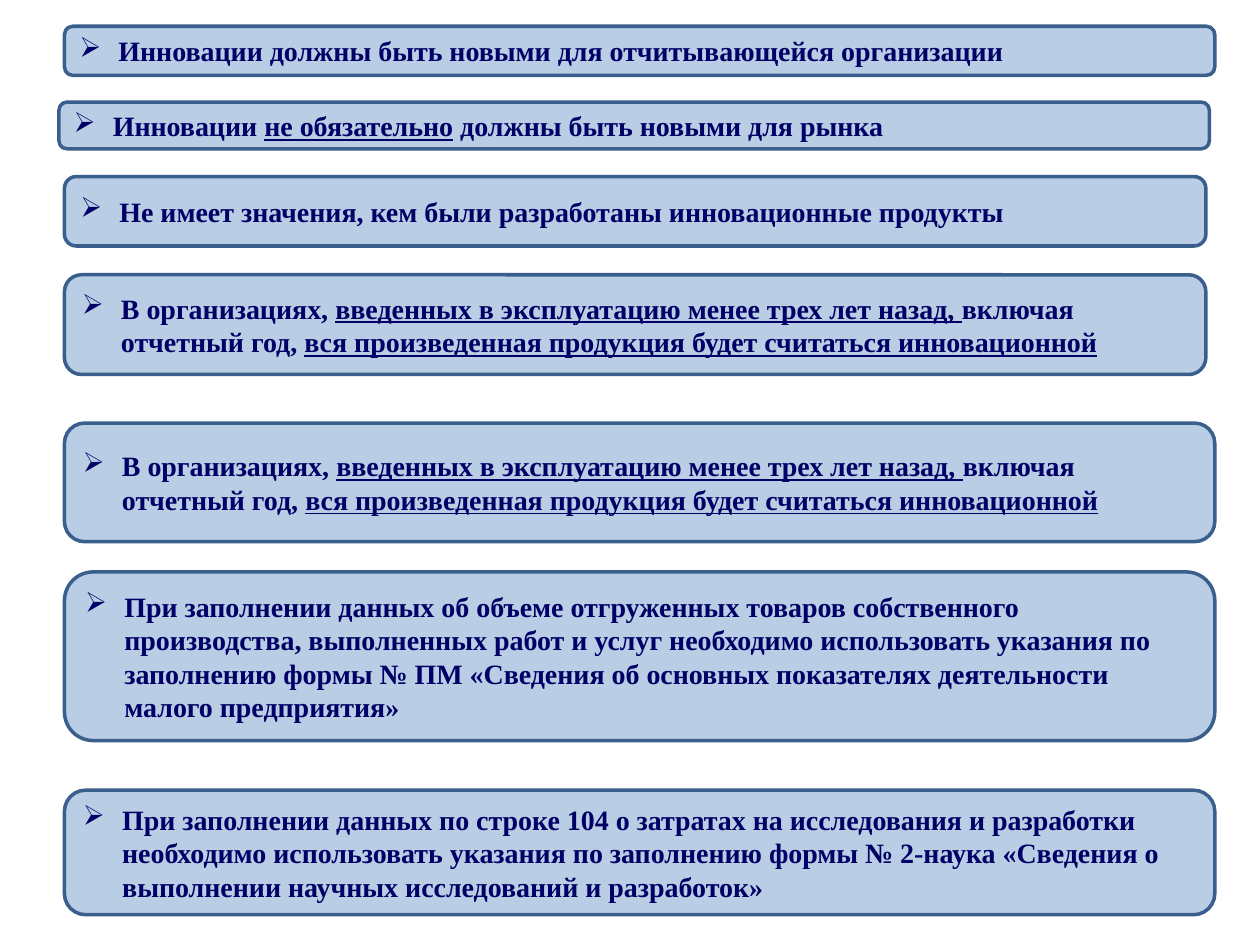
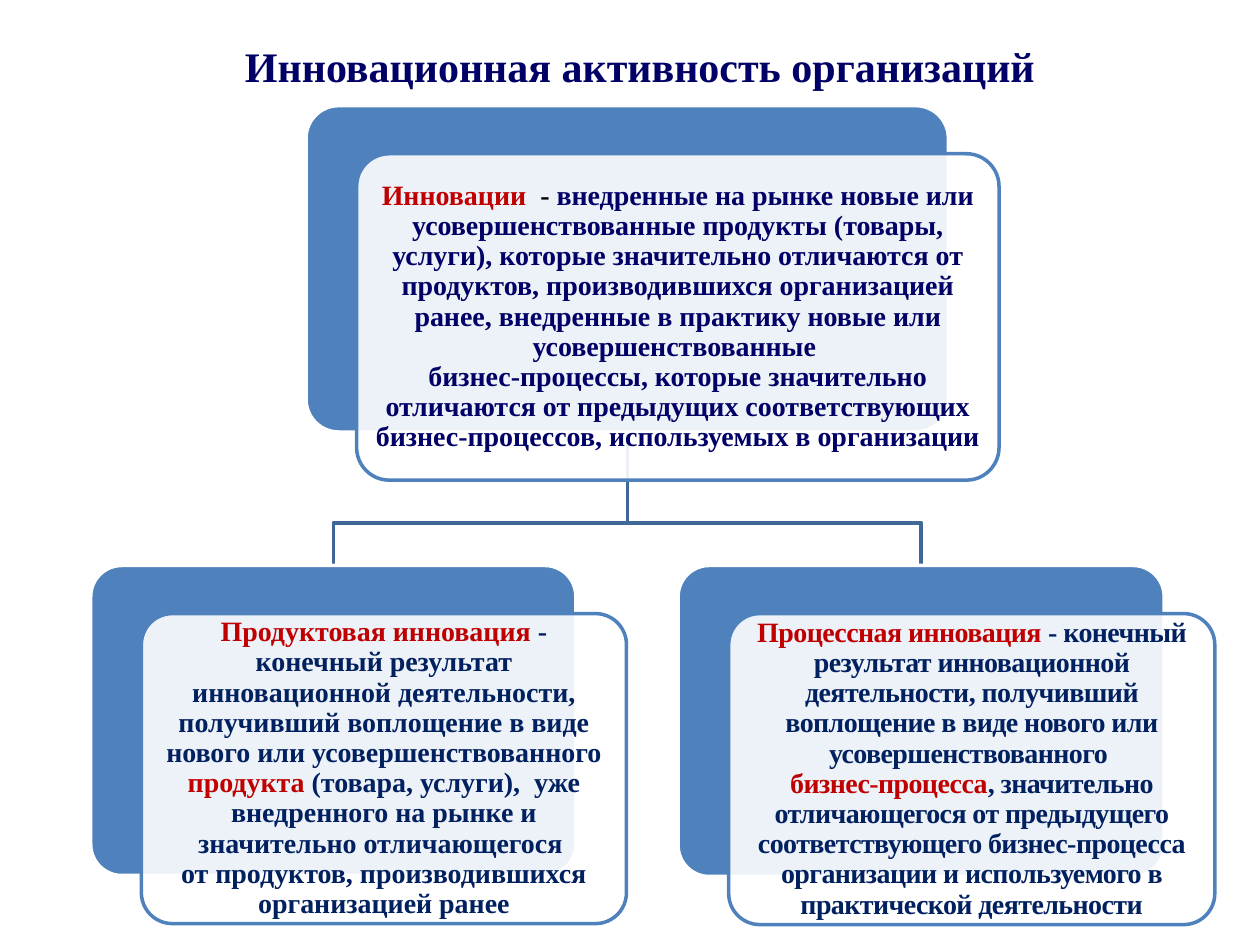
from pptx import Presentation
from pptx import util as u
from pptx.dml.color import RGBColor
from pptx.enum import shapes, text
from pptx.oxml.ns import qn
from lxml import etree

Cm = u.Cm
COLORS = {
    "navy": "000066",
    "deep": "002060",
    "red": "C00000",
    "black": "000000",
    "white": "FFFFFF",
    "pale": "B9CDE5",
    "border": "3A5F8C",
    "blue": "4F81BD",
    "link": "3F6797",
}
BODY_FONT = {"name": "Times New Roman", "size": u.Pt(16), "bold": True}
TITLE_FONT = {**BODY_FONT, "size": u.Pt(24)}
FRAME = {"word_wrap": True, "vertical_anchor": text.MSO_ANCHOR.MIDDLE}
INSETS = ("margin_left", "margin_top", "margin_right", "margin_bottom")


def add_rounded(slide, box, fill, line, radius):
    shape = slide.shapes.add_shape(
        shapes.MSO_SHAPE.ROUNDED_RECTANGLE, *[Cm(length) for length in box])
    shape.adjustments[0] = radius
    shape.shadow.inherit = False
    shape.fill.solid()
    shape.fill.fore_color.rgb = RGBColor.from_string(COLORS[fill])
    shape.line.color.rgb = RGBColor.from_string(COLORS[line])
    shape.line.width = u.Pt(2)
    return shape


def write_runs(frame, pieces, font=BODY_FONT, spacing=None):
    for name, value in FRAME.items():
        setattr(frame, name, value)
    paragraph = frame.paragraphs[0]
    for content, color, underline in pieces:
        for index, line in enumerate(content.split("\n")):
            if index:
                paragraph.add_line_break()
            if not line:
                continue
            run = paragraph.add_run()
            run.text = line
            for name, value in {**font, "underline": underline}.items():
                setattr(run.font, name, value)
            run.font.color.rgb = RGBColor.from_string(COLORS[color])
            if spacing:
                run.font._element.set("spc", str(spacing))
    return paragraph


presentation = Presentation()
presentation.slide_width = Cm(25.4)
presentation.slide_height = Cm(19.05)

rules_slide = presentation.slides.add_slide(presentation.slide_layouts[6])

WIDE, NARROW = 23.19, 23.01
new_organization = [
    ("В организациях, ", False),
    ("введенных в эксплуатацию менее трех лет назад, ", True),
    ("включая отчетный год, ", False),
    ("вся произведенная продукция будет считаться инновационной", True),
]
rules = [
    ((1.3, 0.53, WIDE, 0.99),
     [("Инновации должны быть новыми для отчитывающейся организации", False)]),
    ((1.19, 2.06, WIDE, 0.94),
     [("Инновации ", False), ("не обязательно", True),
      (" должны быть новыми для рынка", False)]),
    ((1.3, 3.56, NARROW, 1.4),
     [("Не имеет значения, кем были разработаны инновационные продукты", False)]),
    ((1.3, 5.54, NARROW, 2.01), new_organization),
    ((1.3, 8.53, WIDE, 2.39), new_organization),
    ((1.3, 11.53, WIDE, 3.4),
     [("При заполнении данных об объеме отгруженных товаров собственного "
       "производства, выполненных работ и услуг необходимо использовать указания "
       "по заполнению формы № ПМ «Сведения об основных показателях деятельности "
       "малого предприятия»", False)]),
    ((1.3, 15.93, WIDE, 2.51),
     [("При заполнении данных по строке 104 о затратах на исследования и "
       "разработки необходимо использовать указания по заполнению формы № 2-наука "
       "«Сведения о выполнении научных исследований и разработок»", False)]),
]
for box, pieces in rules:
    shape = add_rounded(rules_slide, box, "pale", "border", 0.17)
    paragraph = write_runs(
        shape.text_frame,
        [(content, "navy", underline) for content, underline in pieces])
    paragraph.alignment = text.PP_ALIGN.LEFT
    properties = paragraph._p.get_or_add_pPr()
    properties.set("marL", str(Cm(0.79)))
    properties.set("indent", str(-Cm(0.79)))
    bullet_color = etree.SubElement(properties, qn("a:buClr"))
    etree.SubElement(bullet_color, qn("a:srgbClr"), val=COLORS["navy"])
    etree.SubElement(properties, qn("a:buChar"), char="➢")

activity_slide = presentation.slides.add_slide(presentation.slide_layouts[5])

title = activity_slide.shapes.title
title_box = {"left": 1.09, "top": 0.74, "width": 23.62, "height": 1.17}
for name, value in title_box.items():
    setattr(title, name, Cm(value))
paragraph = write_runs(
    title.text_frame,
    [("Инновационная активность организаций", "navy", False)], TITLE_FONT)
paragraph.alignment = text.PP_ALIGN.CENTER

cards = [
    ((6.17, 2.13, 12.95, 6.58), None, [
        ("Инновации  ", "red"),
        ("- ", "black"),
        ("внедренные на рынке новые или усовершенствованные продукты (товары, "
         "услуги), которые значительно отличаются от продуктов, производившихся "
         "организацией ранее, внедренные в практику новые или усовершенствованные "
         "\nбизнес-процессы, которые значительно отличаются от предыдущих "
         "соответствующих бизнес-процессов, используемых в организации", "navy"),
    ]),
    ((1.83, 11.4, 9.78, 6.25), None, [
        ("Продуктовая инновация ", "red"),
        ("- конечный результат инновационной деятельности, получивший воплощение "
         "в виде нового или усовершенствованного ", "deep"),
        ("продукта", "red"),
        (" (товара, услуги),  уже внедренного на рынке и значительно "
         "отличающегося \nот продуктов, производившихся организацией ранее", "deep"),
    ]),
    ((13.67, 11.4, 9.8, 6.27), -30, [
        ("Процессная инновация", "red"),
        (" - конечный результат инновационной деятельности, получивший воплощение "
         "в виде нового или усовершенствованного \n", "deep"),
        ("бизнес-процесса", "red"),
        (", значительно отличающегося от предыдущего соответствующего "
         "бизнес-процесса организации и используемого в практической "
         "деятельности", "deep"),
    ]),
]

parent_left, parent_top, parent_width, parent_height = cards[0][0]
parent_center = parent_left + parent_width / 2
parent_bottom = parent_top + parent_height
branch_level = 10.54
for (left, top, width, height), spacing, pieces in reversed(cards[1:]):
    child_center = left + width / 2
    builder = activity_slide.shapes.build_freeform(
        Cm(parent_center), Cm(parent_bottom))
    builder.add_line_segments(
        [(Cm(parent_center), Cm(branch_level)),
         (Cm(child_center), Cm(branch_level)),
         (Cm(child_center), Cm(top))], close=False)
    branch = builder.convert_to_shape()
    branch.shadow.inherit = False
    branch.fill.background()
    branch.line.color.rgb = RGBColor.from_string(COLORS["link"])
    branch.line.width = u.Pt(2)

SHIFT_X, SHIFT_Y, PADDING = 1.02, 0.97, 0.19
for (left, top, width, height), spacing, pieces in cards:
    add_rounded(activity_slide, (left, top, width, height), "blue", "white", 0.1)
    front_left, front_top = left + SHIFT_X, top + SHIFT_Y
    front = add_rounded(
        activity_slide, (front_left, front_top, width, height), "white", "blue", 0.1)
    front_color = front.fill._xPr.find(qn("a:solidFill")).find(qn("a:srgbClr"))
    etree.SubElement(front_color, qn("a:alpha"), val="90000")

    textbox = activity_slide.shapes.add_textbox(
        Cm(front_left + PADDING), Cm(front_top + PADDING),
        Cm(width - 2 * PADDING), Cm(height - 2 * PADDING))
    for name in INSETS:
        setattr(textbox.text_frame, name, Cm(PADDING))
    paragraph = write_runs(
        textbox.text_frame,
        [(content, color, False) for content, color in pieces], spacing=spacing)
    paragraph.alignment = text.PP_ALIGN.CENTER
    paragraph.line_spacing = 0.9

presentation.save("out.pptx")
